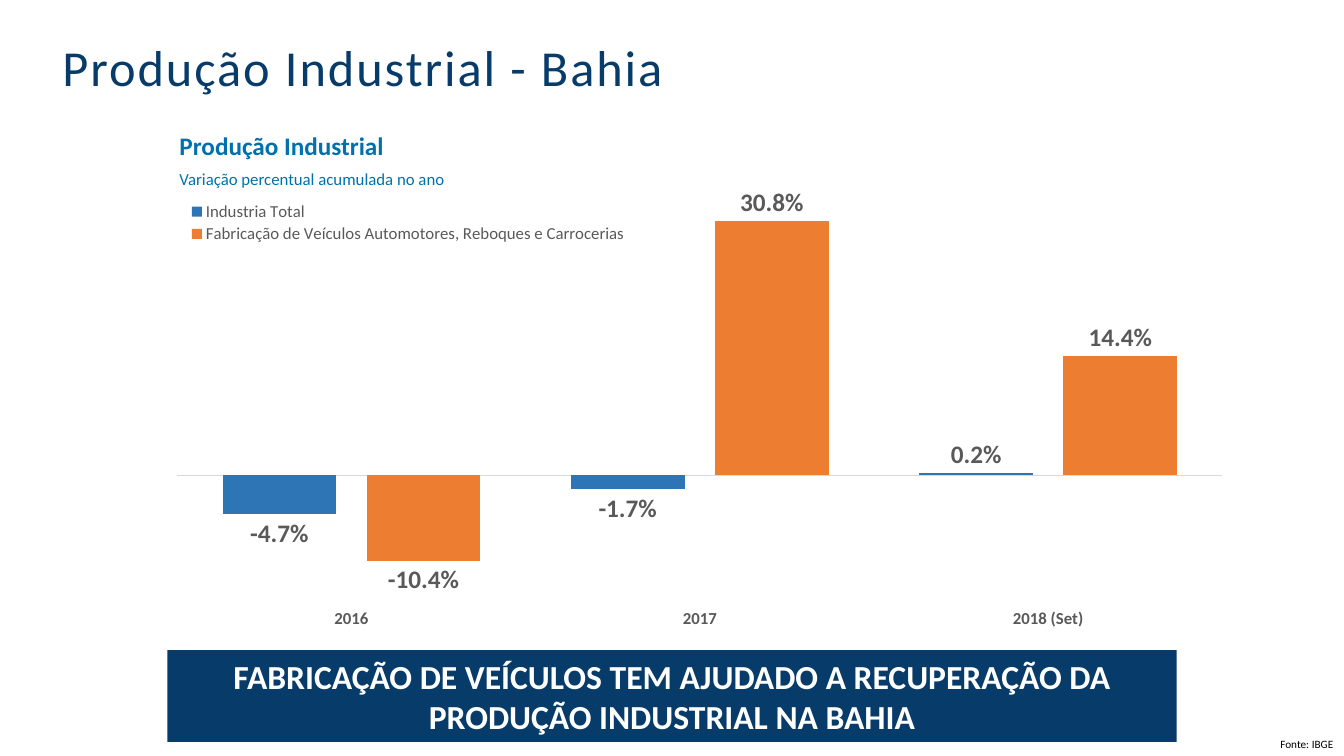
"""Build the slide on industrial output in Bahia."""
from dataclasses import dataclass
from lxml import etree
from pptx import Presentation, util as u
from pptx.chart.data import CategoryChartData
from pptx.dml.color import RGBColor
from pptx.enum import chart as ch, shapes, text
from pptx.oxml import ns

PX = 9144
FONT = "Calibri"
HEX = {"navy": "073B69", "blue": "0071AE", "gray": "595959", "rule": "D9D9D9",
       "bar": "2E75B6", "orange": "ED7D31", "white": "FFFFFF", "black": "000000"}


@dataclass(frozen=True)
class Line:
    words: str
    size: int
    color: str
    bold: bool = False
    before: int = 0
    lead: int = 0
    track: int = 0


@dataclass(frozen=True)
class Box:
    area: tuple[int, int, int, int]
    lines: tuple[Line, ...]
    inset: tuple[int, int] = (10, 5)
    wrap: bool = True
    grow: bool = True
    fill: str = ""


@dataclass(frozen=True)
class Series:
    name: str
    values: tuple[float, ...]
    color: str


BOXES = (
    Box((62, 40, 1210, 55),
        (Line("Produção Industrial - Bahia", 36, "navy", lead=40, track=140),),
        inset=(0, 0), grow=False),
    Box((1260, 727, 73, 24), (Line("Fonte: IBGE", 8, "black"),), wrap=False),
    Box((173, 124, 341, 77),
        (Line("Produção Industrial", 18, "blue", True, before=6),
         Line("Variação percentual acumulada no ano", 12, "blue", before=6)),
        inset=(5, 5)),
)
BANNER = Box((166, 645, 1001, 91),
             (Line("FABRICAÇÃO DE VEÍCULOS TEM AJUDADO A RECUPERAÇÃO DA "
                   "PRODUÇÃO INDUSTRIAL NA BAHIA", 24, "white", True),),
             fill="navy")
YEARS = ("2016", "2017", "2018 (Set)")
SERIES = (
    Series("Industria Total", (-0.047, -0.017, 0.002), "bar"),
    Series("Fabricação de Veículos Automotores, Reboques e Carrocerias",
           (-0.104, 0.308, 0.144), "orange"),
)


def rgb(name: str) -> RGBColor:
    """Look up a colour."""
    return RGBColor.from_string(HEX[name])


def scale(area: tuple[int, ...]) -> list[int]:
    """Turn px into EMU."""
    return [n * PX for n in area]


def style(font, size: int, color: str, bold: bool = False) -> None:
    """Set the look of a font."""
    font.name, font.size, font.bold = FONT, u.Pt(size), bold
    font.color.rgb = rgb(color)


def draw(slide, box: Box) -> None:
    """Draw a text box or a filled banner."""
    if box.fill:
        shape = slide.shapes.add_shape(shapes.MSO_SHAPE.RECTANGLE, *scale(box.area))
        shape.shadow.inherit = False
        shape.fill.solid()
        shape.fill.fore_color.rgb = rgb(box.fill)
        shape.line.fill.background()
    else:
        shape = slide.shapes.add_textbox(*scale(box.area))
    frame = shape.text_frame
    frame.word_wrap = box.wrap
    auto = text.MSO_AUTO_SIZE
    frame.auto_size = auto.SHAPE_TO_FIT_TEXT if box.grow else auto.NONE
    side, edge = scale(box.inset)
    frame.margin_left = frame.margin_right = side
    frame.margin_top = frame.margin_bottom = edge
    for i, line in enumerate(box.lines):
        para = frame.add_paragraph() if i else frame.paragraphs[0]
        para.text = line.words
        para.alignment = text.PP_ALIGN.CENTER if box.fill else text.PP_ALIGN.LEFT
        style(para.font, line.size, line.color, line.bold)
        para.space_before = u.Pt(line.before)
        if line.lead:
            para.line_spacing = u.Pt(line.lead)
        if line.track:
            para._p.pPr.find(ns.qn("a:defRPr")).set("spc", str(line.track))


def place(parent, index: int, area: tuple[float, ...], inner: bool = False) -> None:
    """Fix the place of a chart part, in shares of the chart."""
    for old in parent.findall(ns.qn("c:layout")):
        parent.remove(old)
    layout = etree.Element(ns.qn("c:layout"))
    manual = etree.SubElement(layout, ns.qn("c:manualLayout"))
    rules = [("layoutTarget", "inner")] if inner else []
    rules += [("xMode", "edge"), ("yMode", "edge")]
    rules += zip("xywh", map(str, area))
    for tag, value in rules:
        etree.SubElement(manual, ns.qn(f"c:{tag}")).set("val", value)
    parent.insert(index, layout)


def plot(slide) -> None:
    """Draw the column chart."""
    data = CategoryChartData(number_format="0.0%")
    data.categories = YEARS
    for item in SERIES:
        data.add_series(item.name, item.values)
    chart = slide.shapes.add_chart(ch.XL_CHART_TYPE.COLUMN_CLUSTERED,
                                   *scale((161, 170, 1061, 464)), data).chart
    style(chart.font, 10, "black")
    chart.has_title = False
    chart.has_legend = True
    chart.legend.position = ch.XL_LEGEND_POSITION.RIGHT
    chart.legend.include_in_layout = False
    style(chart.legend.font, 12, "gray")
    place(chart.legend._element, 1, (0.02, 0.06, 0.42, 0.1))
    place(chart._chartSpace.chart.plotArea, 0, (0.014, 0.033, 0.977, 0.881), True)

    axis = chart.category_axis
    axis.tick_label_position = ch.XL_TICK_LABEL_POSITION.LOW
    axis.major_tick_mark = ch.XL_TICK_MARK.NONE
    axis.format.line.color.rgb = rgb("rule")
    axis.format.line.width = u.Pt(0.75)
    style(axis.tick_labels.font, 12, "gray", True)
    axis = chart.value_axis
    axis.minimum_scale, axis.maximum_scale = -0.15, 0.35
    axis.has_major_gridlines = False
    axis.visible = False

    bars = chart.plots[0]
    bars.gap_width, bars.overlap, bars.vary_by_categories = 80, -27, False
    for item, series in zip(SERIES, bars.series):
        series.invert_if_negative = False
        series.format.fill.solid()
        series.format.fill.fore_color.rgb = rgb(item.color)
        labels = series.data_labels
        labels.show_value = True
        labels.number_format = "0.0%"
        labels.number_format_is_linked = False
        labels.position = ch.XL_LABEL_POSITION.OUTSIDE_END
        style(labels.font, 18, "gray", True)


def main() -> None:
    """Build and save the deck."""
    deck = Presentation()
    deck.slide_width, deck.slide_height = scale((1333, 750))
    slide = deck.slides.add_slide(deck.slide_layouts[6])
    for box in BOXES:
        draw(slide, box)
    plot(slide)
    draw(slide, BANNER)
    deck.save("out.pptx")


if __name__ == "__main__":
    main()
